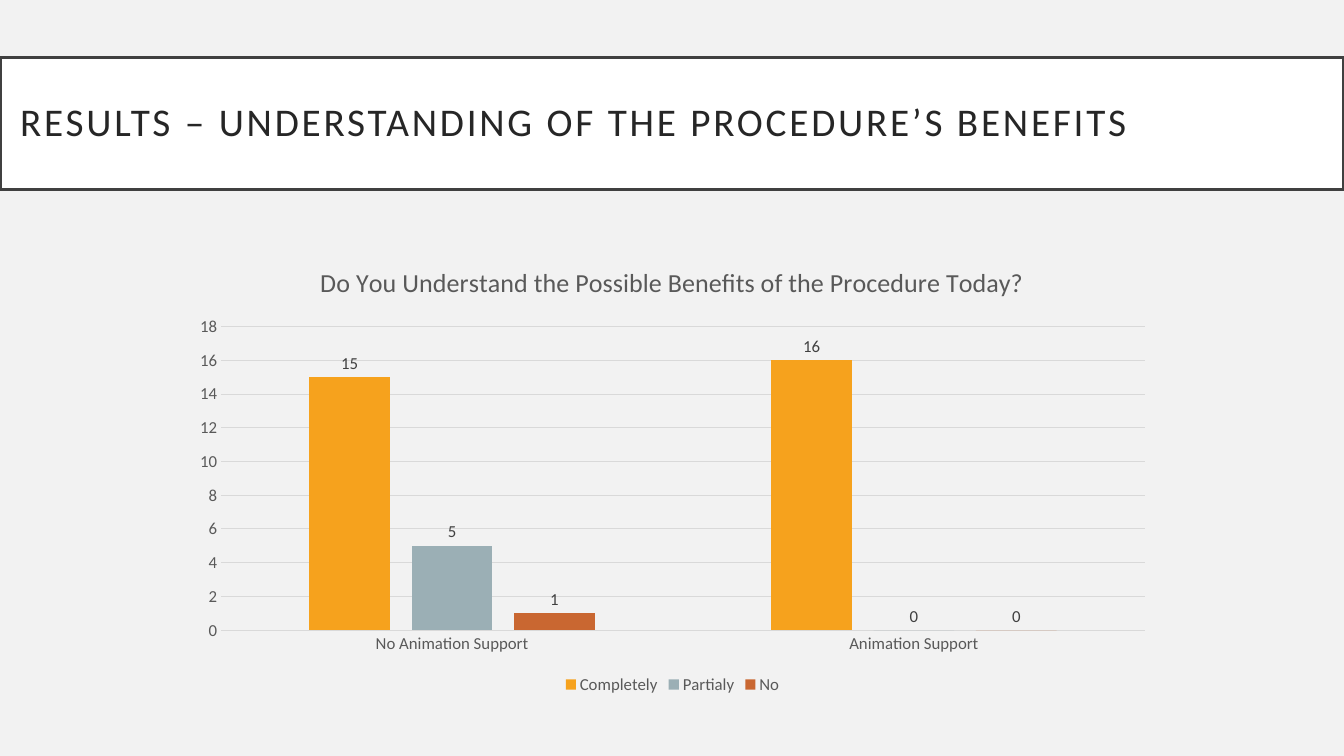
from dataclasses import dataclass

import pptx
import pptx.chart.data
import pptx.dml.color
import pptx.enum.chart
import pptx.enum.text
import pptx.util
from pptx.util import Inches

FONT = "Calibri"
GRAY_TEXT = "595959"
GRAY_LINE = "D9D9D9"


@dataclass(frozen=True)
class Answer:
    name: str
    counts: tuple[int, ...]
    color: str


GROUPS = ("No Animation Support", "Animation Support")
ANSWERS = (
    Answer("Completely", (15, 16), "F6A21D"),
    Answer("Partialy", (5, 0), "9BAFB5"),
    Answer("No", (1, 0), "C96731"),
)


def rgb(color: str) -> pptx.dml.color.RGBColor:
    return pptx.dml.color.RGBColor.from_string(color)


def set_fill(fill, color: str) -> None:
    fill.solid()
    fill.fore_color.rgb = rgb(color)


def set_line(line, color: str, width: float) -> None:
    set_fill(line.fill, color)
    line.width = pptx.util.Pt(width)


def set_font(font, size: float, color: str) -> None:
    font.name = FONT
    font.size = pptx.util.Pt(size)
    font.bold = False
    font.color.rgb = rgb(color)


def format_title(title, text: str) -> None:
    title.left, title.top = Inches(0), Inches(0.57)
    title.width, title.height = Inches(13.33), Inches(1.31)
    set_fill(title.fill, "FFFFFF")
    set_line(title.line, "404040", 2.5)

    frame = title.text_frame
    frame.text = text
    frame.word_wrap = True
    frame.auto_size = pptx.enum.text.MSO_AUTO_SIZE.NONE
    frame.vertical_anchor = pptx.enum.text.MSO_ANCHOR.MIDDLE
    frame.margin_left = frame.margin_right = Inches(0.2)
    frame.margin_top = frame.margin_bottom = Inches(0.2)

    para = frame.paragraphs[0]
    para.alignment = pptx.enum.text.PP_ALIGN.LEFT
    para.line_spacing = 0.9
    set_font(para.font, 28, "262626")
    para.runs[0].font._element.set("spc", "200")  # letter spacing of 2 pt


def format_axis(axis) -> None:
    axis.major_tick_mark = pptx.enum.chart.XL_TICK_MARK.NONE
    axis.minor_tick_mark = pptx.enum.chart.XL_TICK_MARK.NONE
    set_font(axis.tick_labels.font, 12, GRAY_TEXT)


def add_answer_chart(page, heading: str) -> None:
    data = pptx.chart.data.CategoryChartData(number_format="General")
    data.categories = GROUPS
    for answer in ANSWERS:
        data.add_series(answer.name, answer.counts)
    chart = page.shapes.add_chart(
        pptx.enum.chart.XL_CHART_TYPE.COLUMN_CLUSTERED,
        Inches(1.79), Inches(2.43), Inches(9.76), Inches(4.5), data,
    ).chart
    set_font(chart.font, 10, "000000")

    chart.has_title = True
    chart.chart_title.include_in_layout = False
    heading_frame = chart.chart_title.text_frame
    heading_frame.text = heading
    set_font(heading_frame.paragraphs[0].font, 18.6, GRAY_TEXT)

    chart.has_legend = True
    chart.legend.position = pptx.enum.chart.XL_LEGEND_POSITION.BOTTOM
    chart.legend.include_in_layout = False
    set_font(chart.legend.font, 12, GRAY_TEXT)

    format_axis(chart.category_axis)
    set_line(chart.category_axis.format.line, GRAY_LINE, 0.75)
    counts = chart.value_axis
    format_axis(counts)
    counts.minimum_scale, counts.maximum_scale, counts.major_unit = 0, 18, 2
    counts.format.line.fill.background()
    set_line(counts.major_gridlines.format.line, GRAY_LINE, 0.75)

    plot = chart.plots[0]
    plot.vary_by_categories = False
    plot.gap_width, plot.overlap = 219, -27
    for series, answer in zip(plot.series, ANSWERS):
        set_fill(series.format.fill, answer.color)
        series.invert_if_negative = False
        labels = series.data_labels
        labels.show_value = True
        labels.position = pptx.enum.chart.XL_LABEL_POSITION.OUTSIDE_END
        set_font(labels.font, 12, "404040")


def main() -> None:
    deck = pptx.Presentation()
    deck.slide_width, deck.slide_height = Inches(13.33), Inches(7.5)
    page = deck.slides.add_slide(deck.slide_layouts.get_by_name("Title Only"))
    set_fill(page.background.fill, "F2F2F2")
    format_title(page.shapes.title, "RESULTS – UNDERSTANDING OF THE PROCEDURE’S BENEFITS")
    add_answer_chart(page, "Do You Understand the Possible Benefits of the Procedure Today?")
    deck.save("out.pptx")


if __name__ == "__main__":
    main()
